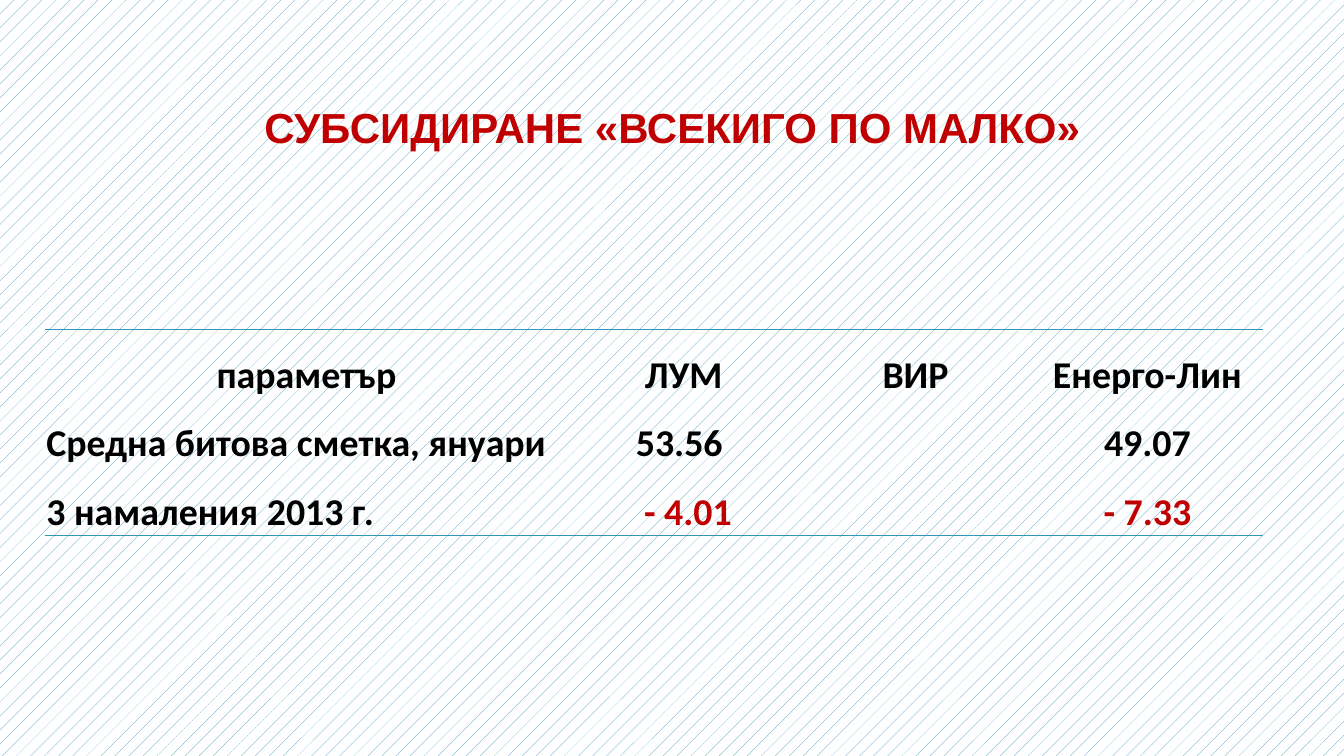
from dataclasses import dataclass

from lxml.etree import SubElement
from pptx import Presentation
from pptx.dml.color import RGBColor
from pptx.enum.dml import MSO_PATTERN
from pptx.enum.text import MSO_ANCHOR, PP_ALIGN
from pptx.oxml import parse_xml
from pptx.oxml.ns import nsdecls, qn
from pptx.util import Inches, Pt


@dataclass(frozen=True)
class Theme:
    """Colours, fonts and type sizes of the slide."""

    accent: str = "3494BA"
    paper: str = "FFFFFF"
    ink: str = "000000"
    red: str = "C00000"
    title_font: str = "Arial"
    table_font: str = "Calibri"
    title_size: int = 30
    table_size: int = 27


THEME = Theme()
PLAIN_TABLE_STYLE = "{2D5ABB26-0587-4C30-8999-92F81FD0307C}"
COLUMN_WIDTHS = (5.18, 2.3, 2.3, 2.3)
ROW_HEIGHT = 0.68
BILLS = (
    ("параметър", "ЛУМ", "ВИР", "Енерго-Лин"),
    ("Средна битова сметка, януари", "53.56 ", "", "49.07"),
    ("3 намаления 2013 г.", " - 4.01", "", "- 7.33"),
)


def apply_format(target, values):
    """Set each named attribute on the target."""
    for name, value in values.items():
        setattr(target, name, value)


def write_text(frame, text, font, size, colour, align):
    """Fill a text frame with one bold paragraph."""
    paragraph = frame.paragraphs[0]
    paragraph.alignment = align
    run = paragraph.add_run()
    run.text = text
    apply_format(run.font, {"name": font, "size": Pt(size), "bold": True})
    run.font.color.rgb = RGBColor.from_string(colour)


def hatch_background(slide):
    """Give the slide its fine patterned background."""
    fill = slide.background.fill
    fill.patterned()
    fill.pattern = MSO_PATTERN.PERCENT_5
    fill.fore_color.rgb = RGBColor.from_string(THEME.accent)
    fill.back_color.rgb = RGBColor.from_string(THEME.paper)


def add_title(slide, text):
    """Place the centred heading."""
    heading = slide.shapes.add_textbox(
        Inches(0.92), Inches(0.88), Inches(11.5), Inches(1.45)
    ).text_frame
    apply_format(heading, {
        "word_wrap": True,
        "vertical_anchor": MSO_ANCHOR.MIDDLE,
        "margin_bottom": Inches(0.74),
    })
    write_text(heading, text, THEME.title_font, THEME.title_size,
               THEME.red, PP_ALIGN.CENTER)


def rule_cell(cell, edge):
    """Draw a thin accent line on one edge of a cell."""
    line = parse_xml(f'<a:{edge} {nsdecls("a")} w="{Pt(1)}"/>')
    fill = SubElement(line, qn("a:solidFill"))
    SubElement(fill, qn("a:srgbClr"), val=THEME.accent)
    cell._tc.get_or_add_tcPr().insert(0, line)


def fill_cell(cell, text, colour, align):
    """Format a table cell and write its text."""
    apply_format(cell, {
        "vertical_anchor": MSO_ANCHOR.BOTTOM,
        "margin_left": Inches(0.01),
        "margin_right": Inches(0.01),
        "margin_top": Inches(0.01),
        "margin_bottom": Inches(0),
    })
    cell.fill.background()
    if text:
        write_text(cell.text_frame, text, THEME.table_font,
                   THEME.table_size, colour, align)


def add_bill_table(slide, rows):
    """Add the bill table, ruled above its first and below its last row."""
    bills = slide.shapes.add_table(
        len(rows), len(COLUMN_WIDTHS), Inches(0.45), Inches(3.27),
        Inches(sum(COLUMN_WIDTHS)), Inches(ROW_HEIGHT * len(rows))
    ).table
    apply_format(bills, {"first_row": False, "horz_banding": False})
    bills._tbl.tblPr.find(qn("a:tableStyleId")).text = PLAIN_TABLE_STYLE
    for column, width in zip(bills.columns, COLUMN_WIDTHS):
        column.width = Inches(width)
    last = len(rows) - 1
    for r, row in enumerate(rows):
        bills.rows[r].height = Inches(ROW_HEIGHT)
        for c, text in enumerate(row):
            colour = THEME.red if r == last and c else THEME.ink
            align = PP_ALIGN.LEFT if r and not c else PP_ALIGN.CENTER
            cell = bills.cell(r, c)
            fill_cell(cell, text, colour, align)
            if r == 0:
                rule_cell(cell, "lnT")
            if r == last:
                rule_cell(cell, "lnB")


def main():
    """Build and save the slide."""
    deck = Presentation()
    apply_format(deck, {"slide_width": Inches(13.33), "slide_height": Inches(7.5)})
    slide = deck.slides.add_slide(deck.slide_layouts[6])
    hatch_background(slide)
    add_title(slide, "СУБСИДИРАНЕ «ВСЕКИГО ПО МАЛКО»")
    add_bill_table(slide, BILLS)
    deck.save("out.pptx")


if __name__ == "__main__":
    main()
